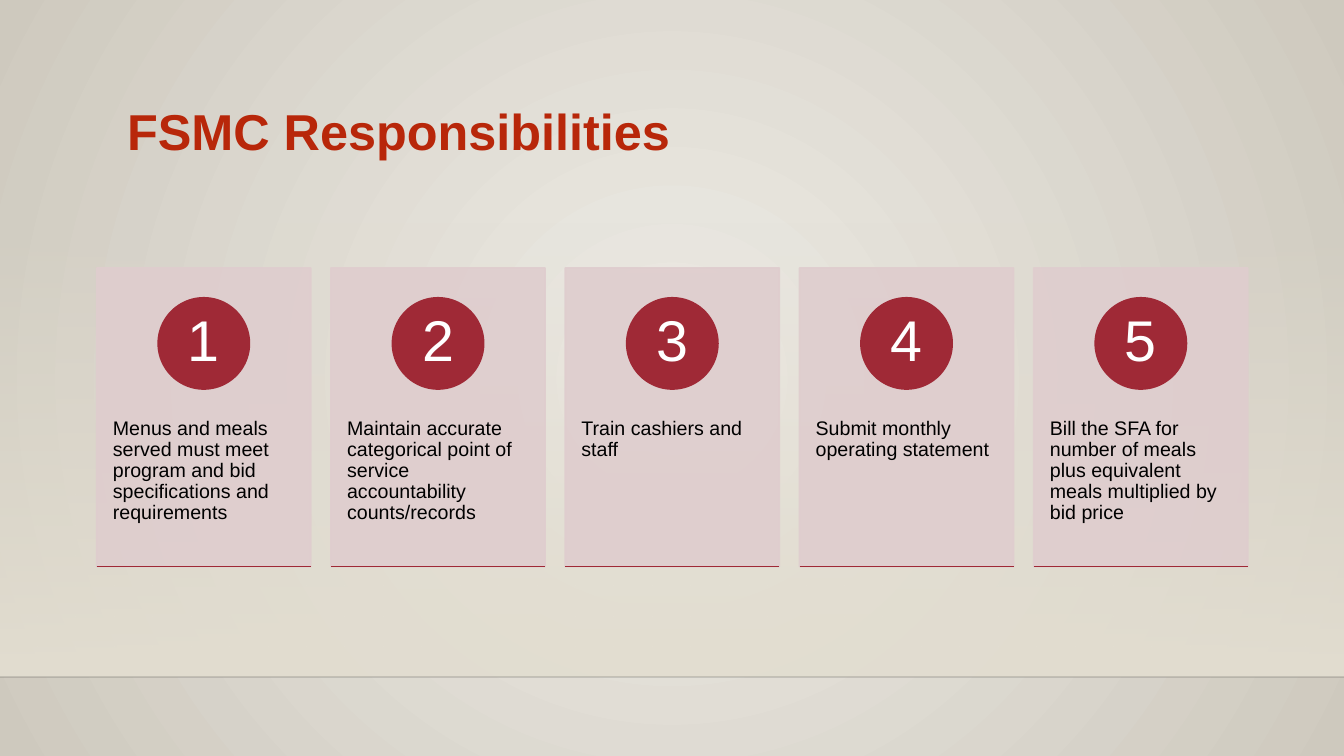
from lxml import etree
from pptx import Presentation
from pptx.dml.color import RGBColor
from pptx.enum.shapes import MSO_CONNECTOR, MSO_SHAPE
from pptx.enum.text import MSO_ANCHOR, MSO_AUTO_SIZE, PP_ALIGN
from pptx.oxml.ns import qn
from pptx.util import Inches, Pt

RECTANGLE, OVAL = MSO_SHAPE.RECTANGLE, MSO_SHAPE.OVAL
STRAIGHT = MSO_CONNECTOR.STRAIGHT
TOP, MIDDLE, BOTTOM = MSO_ANCHOR.TOP, MSO_ANCHOR.MIDDLE, MSO_ANCHOR.BOTTOM
LEFT, CENTER = PP_ALIGN.LEFT, PP_ALIGN.CENTER
NO_FIT = MSO_AUTO_SIZE.NONE

TITLE_RED = RGBColor(0xB8, 0x27, 0x0A)
CRIMSON = RGBColor(0x9F, 0x29, 0x36)
PINK = RGBColor(0xDF, 0xCD, 0xCE)
CREAM = RGBColor(0xEE, 0xEC, 0xE6)
STONE = RGBColor(0xCE, 0xC9, 0xBE)
SAND = RGBColor(0xE3, 0xDE, 0xD1)
NEAR_BLACK = RGBColor(0x00, 0x00, 0x01)
BLACK = RGBColor(0x00, 0x00, 0x00)
WHITE = RGBColor(0xFF, 0xFF, 0xFF)

TITLE_ONLY = 5
CARD_LEFT, CARD_TOP = 7.2, 35.45
CARD_WIDTH, CARD_HEIGHT = 15.93, 39.5
CARD_STEP = 17.43
CIRCLE_WIDTH, CIRCLE_HEIGHT = 6.78, 12.05
RESPONSIBILITIES = [
    "Menus and meals served must meet program and bid specifications and requirements",
    "Maintain accurate categorical point of service accountability counts/records",
    "Train cashiers and staff",
    "Submit monthly operating statement",
    "Bill the SFA for number of meals plus equivalent meals multiplied by bid price",
]


class SlideBuilder:
    """Draws styled elements on one slide, with places in percent of its size."""

    font_name = "Arial"
    line_width = Pt(1.25)

    def __init__(self, deck):
        self.deck = deck
        self.page = deck.slides.add_slide(deck.slide_layouts[TITLE_ONLY])

    def area(self, left, top, width, height):
        """Turn percent shares into slide lengths."""
        across, down = self.deck.slide_width / 100, self.deck.slide_height / 100
        return [round(length) for length in
                (left * across, top * down, width * across, height * down)]

    def fade(self, shape, *opacities):
        """Set the opacity of the shape's colours in order, in percent."""
        for color, opacity in zip(shape._element.iter(qn("a:srgbClr")), opacities):
            etree.SubElement(color, qn("a:alpha")).set("val", str(opacity * 1000))

    def gradient(self, fill, *colors):
        """Fill with an even blend of two colours."""
        fill.gradient()
        for stop, color in zip(fill.gradient_stops, colors):
            stop.color.rgb = color

    def background(self, center, edge):
        """Give the page a round gradient."""
        self.gradient(self.page.background.fill, center, edge)
        linear = next(self.page._element.iter(qn("a:lin")))
        round_path = etree.Element(qn("a:path"))
        round_path.set("path", "circle")
        focus = etree.SubElement(round_path, qn("a:fillToRect"))
        for side in "ltrb":
            focus.set(side, "50000")
        linear.getparent().replace(linear, round_path)

    def band(self, place, color):
        """Add a band that grows opaque downwards."""
        band = self.page.shapes.add_shape(RECTANGLE, *self.area(*place))
        band.shadow.inherit = False
        band.line.fill.background()
        self.gradient(band.fill, color, color)
        band.fill.gradient_angle = 270
        self.fade(band, 0)

    def shape(self, kind, place, color):
        """Add a shape with fill and outline in one colour."""
        shape = self.page.shapes.add_shape(kind, *self.area(*place))
        shape.shadow.inherit = False
        shape.fill.solid()
        shape.fill.fore_color.rgb = color
        shape.line.color.rgb = color
        shape.line.width = self.line_width
        return shape

    def rule(self, left, top, width, color, weight):
        """Add a horizontal line."""
        x, y, length, _ = self.area(left, top, width, 0)
        rule = self.page.shapes.add_connector(STRAIGHT, x, y, x + length, y)
        rule.line.color.rgb = color
        rule.line.width = weight
        etree.SubElement(rule._element.spPr, qn("a:effectLst"))
        return rule

    def set_text(self, box, text, size, color, anchor=TOP, align=LEFT,
                 insets=(0.1, 0.05), bold=False):
        """Set the text of a box as one styled paragraph."""
        frame = box.text_frame
        frame.text = text
        frame.word_wrap = True
        frame.auto_size = NO_FIT
        frame.vertical_anchor = anchor
        frame.margin_left = frame.margin_right = Inches(insets[0])
        frame.margin_top = frame.margin_bottom = Inches(insets[1])
        para = frame.paragraphs[0]
        para.alignment = align
        para.line_spacing = 0.9
        para.font.name = self.font_name
        para.font.size = Pt(size)
        para.font.bold = bold
        para.font.color.rgb = color

    def title(self, place, text):
        """Place and fill the title placeholder."""
        title = self.page.shapes.title
        title.left, title.top, title.width, title.height = self.area(*place)
        self.set_text(title, text, 36, TITLE_RED, BOTTOM, bold=True)

    def card(self, number, text):
        """Add a numbered card in its column."""
        left = CARD_LEFT + (number - 1) * CARD_STEP
        panel = self.shape(RECTANGLE, (left, CARD_TOP, CARD_WIDTH, CARD_HEIGHT), PINK)
        self.fade(panel, 90, 90)
        box = self.page.shapes.add_textbox(*self.area(left, 50.53, CARD_WIDTH, 23.6))
        self.set_text(box, text, 14, BLACK, insets=(0.16, 0.36))
        circle_left = left + (CARD_WIDTH - CIRCLE_WIDTH) / 2
        circle = self.shape(OVAL, (circle_left, 39.4, CIRCLE_WIDTH, CIRCLE_HEIGHT), CRIMSON)
        self.set_text(circle, str(number), 41, WHITE, MIDDLE, CENTER, (0.07, 0.01))
        self.rule(left, CARD_TOP + CARD_HEIGHT, CARD_WIDTH, CRIMSON, self.line_width)


def main():
    """Build and save the slide."""
    deck = Presentation()
    deck.slide_width, deck.slide_height = Inches(13.33), Inches(7.5)
    builder = SlideBuilder(deck)
    builder.background(CREAM, STONE)
    builder.band((0, 29.33, 100, 60.2), SAND)
    floor = builder.rule(0, 89.55, 100, NEAR_BLACK, Pt(1))
    builder.fade(floor, 20)
    builder.title((8.7, 5.33, 90, 16.67), "FSMC Responsibilities")
    for number, text in enumerate(RESPONSIBILITIES, start=1):
        builder.card(number, text)
    deck.save("out.pptx")


if __name__ == "__main__":
    main()
